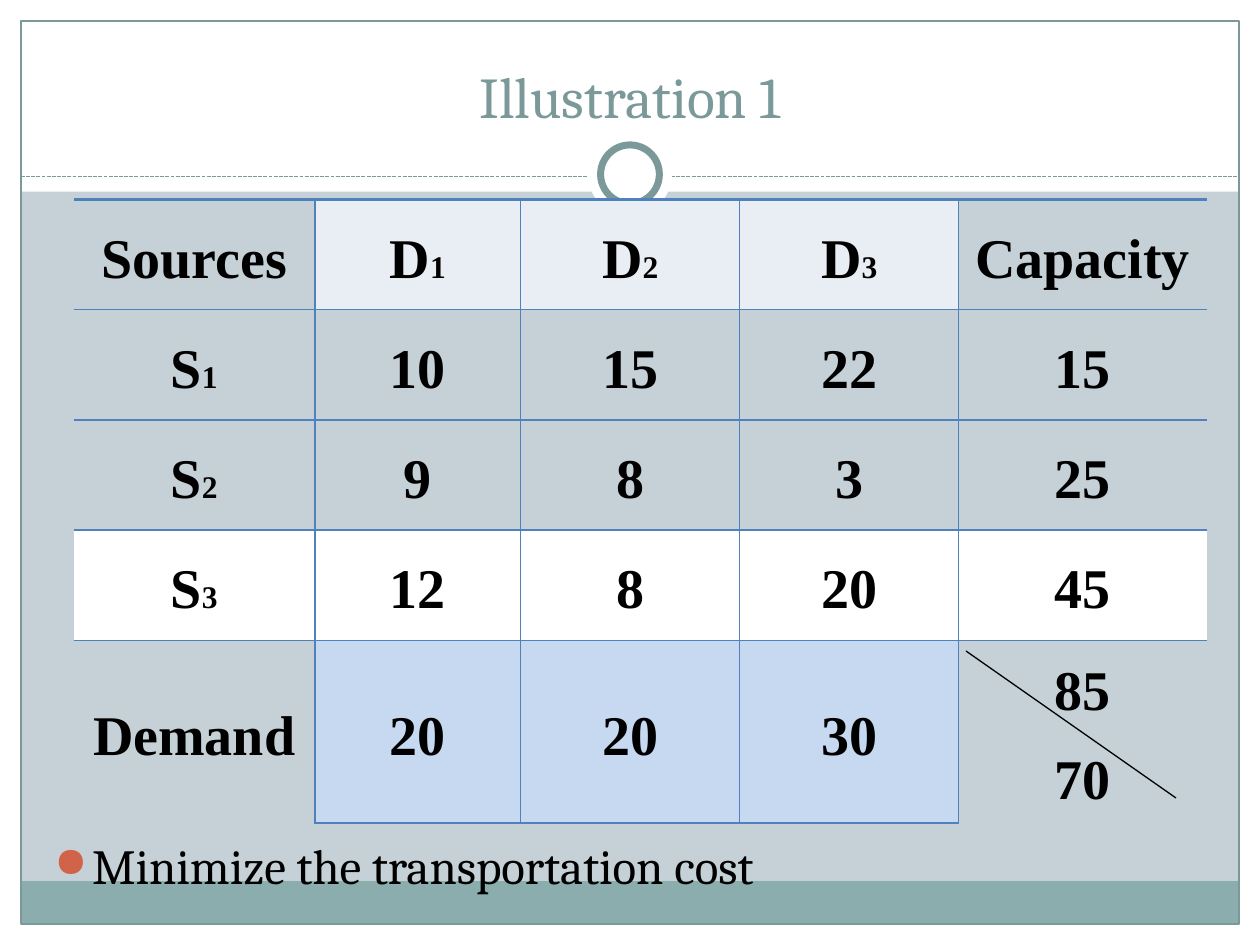
from lxml import etree
from pptx import Presentation
from pptx.dml.color import RGBColor
from pptx.enum.dml import MSO_LINE
from pptx.enum.shapes import MSO_CONNECTOR, MSO_SHAPE
from pptx.enum.text import MSO_ANCHOR, PP_ALIGN
from pptx.oxml.ns import qn
from pptx.util import Pt

RECTANGLE, OVAL = MSO_SHAPE.RECTANGLE, MSO_SHAPE.OVAL
TOP, MIDDLE, BOTTOM = MSO_ANCHOR.TOP, MSO_ANCHOR.MIDDLE, MSO_ANCHOR.BOTTOM
LEFT, CENTER = PP_ALIGN.LEFT, PP_ALIGN.CENTER
STRAIGHT, DASHED = MSO_CONNECTOR.STRAIGHT, MSO_LINE.SQUARE_DOT

TITLE = "Illustration 1"
GOAL = "Minimize the transportation cost"
# A cell is a list of paragraphs; a paragraph is a symbol and its index.
DESTINATIONS = [[("D", str(number))] for number in (1, 2, 3)]
COSTS = [(10, 15, 22, 15), (9, 8, 3, 25), (12, 8, 20, 45)]
ROWS = [
    [[("Sources", "")], *DESTINATIONS, [("Capacity", "")]],
    *[[[("S", str(number))]] + [[(str(value), "")] for value in values]
      for number, values in enumerate(COSTS, 1)],
    [[("Demand", "")], [("20", "")], [("20", "")], [("30", "")],
     [("85", ""), ("70", "")]],
]
COLUMN_WIDTHS = [138, 117.5, 125.2, 125.2, 141.8]
ROW_HEIGHTS = [63, 63, 63, 63, 64]
TABLE_LEFT, TABLE_TOP = 42, 114

WHITE, BLACK, GREEN, BLUE = "FFFFFF", "000000", "7C999A", "4F81BD"
FOOTER, BACKGROUND, BULLET = "8CADAE", "C5D1D7", "D16349"
HEADER_FILL, DEMAND_FILL = "E9EDF4", "C6D9F1"
# left, top, width, height, preset, fill, line width
FRAME = [
    (0, 528, 720, 12, RECTANGLE, WHITE, 0),
    (0, 0, 720, 109.5, RECTANGLE, WHITE, 0),
    (0, 0, 12, 540, RECTANGLE, WHITE, 0),
    (708, 0, 12, 540, RECTANGLE, WHITE, 0),
    (12, 503.5, 695.5, 24.5, RECTANGLE, FOOTER, 0),
    (12, 12, 696, 516, RECTANGLE, None, 0.75),
]
RINGS = [
    (336, 75.6, 48, 48, OVAL, WHITE, 0),
    (343.2, 82.8, 33.6, 33.6, OVAL, WHITE, 4),
]


def color(value):
    return RGBColor.from_string(value)


def add_shape(slide, left, top, width, height, preset, fill, line_width):
    shape = slide.shapes.add_shape(preset, Pt(left), Pt(top), Pt(width), Pt(height))
    shape.shadow.inherit = False
    if fill:
        shape.fill.solid()
        shape.fill.fore_color.rgb = color(fill)
    else:
        shape.fill.background()
    if line_width:
        shape.line.color.rgb = color(GREEN)
        shape.line.width = Pt(line_width)
    else:
        shape.line.fill.background()


def add_line(slide, start, end, line_color, dash=None):
    line = slide.shapes.add_connector(STRAIGHT, *map(Pt, start + end))
    line.line.color.rgb = color(line_color)
    line.line.width = Pt(0.75)
    if dash:
        line.line.dash_style = dash
    etree.SubElement(line._element.spPr, qn("a:effectLst"))


def add_run(paragraph, text, *, size, font="Cambria", text_color=BLACK, bold=False):
    run = paragraph.add_run()
    run.text = text
    run.font.size = Pt(size)
    run.font.name = font
    run.font.bold = bold
    run.font.color.rgb = color(text_color)


def add_text(slide, text, left, top, width, height, *, align=LEFT, anchor=TOP, **format):
    box = slide.shapes.add_textbox(Pt(left), Pt(top), Pt(width), Pt(height))
    box.text_frame.word_wrap = True
    box.text_frame.vertical_anchor = anchor
    paragraph = box.text_frame.paragraphs[0]
    paragraph.alignment = align
    add_run(paragraph, text, **format)
    return paragraph


def add_bullet(paragraph):
    properties = paragraph._p.get_or_add_pPr()
    properties.set("marL", str(Pt(21.6)))
    properties.set("indent", str(-Pt(21.6)))
    bullet_color = etree.SubElement(properties, qn("a:buClr"))
    etree.SubElement(bullet_color, qn("a:srgbClr"), val=BULLET)
    etree.SubElement(properties, qn("a:buSzPct"), val="85000")
    etree.SubElement(properties, qn("a:buChar"), char="●")


def set_border(cell, side, width):
    """Draw one side (L, R, T or B) of a cell; width 0 leaves it open."""
    line = etree.SubElement(cell._tc.get_or_add_tcPr(), qn(f"a:ln{side}"), w=str(Pt(width)))
    if width:
        fill = etree.SubElement(line, qn("a:solidFill"))
        etree.SubElement(fill, qn("a:srgbClr"), val=BLUE)
    else:
        etree.SubElement(line, qn("a:noFill"))


def cell_fill(row, column):
    if row == 3:
        return WHITE
    inner = 0 < column < len(COLUMN_WIDTHS) - 1
    return {0: HEADER_FILL, 4: DEMAND_FILL}.get(row) if inner else None


def format_cell(cell, paragraphs, row, column):
    last_row, last_column = len(ROWS) - 1, len(COLUMN_WIDTHS) - 1
    outer_column = column in (0, last_column)
    set_border(cell, "L", 1 if column else 0)
    set_border(cell, "R", 1 if column < last_column else 0)
    set_border(cell, "T", 1 if row else 2.25)
    set_border(cell, "B", 0 if row == last_row and outer_column else 1)
    fill = cell_fill(row, column)
    if fill:
        cell.fill.solid()
        cell.fill.fore_color.rgb = color(fill)
    else:
        cell.fill.background()
    cell.vertical_anchor = MIDDLE
    cell.margin_left = cell.margin_right = Pt(6.5)
    cell.margin_top = cell.margin_bottom = Pt(3)
    for number, (symbol, index) in enumerate(paragraphs):
        frame = cell.text_frame
        paragraph = frame.add_paragraph() if number else frame.paragraphs[0]
        paragraph.alignment = CENTER
        paragraph.line_spacing = 1.15
        paragraph.space_after = Pt(10)
        for text, size in ((symbol, 32), (index, 18)):
            if text:
                add_run(paragraph, text, size=size, font="Times New Roman", bold=True)


def add_cost_table(slide):
    table = slide.shapes.add_table(
        len(ROWS), len(COLUMN_WIDTHS), Pt(TABLE_LEFT), Pt(TABLE_TOP),
        Pt(sum(COLUMN_WIDTHS)), Pt(sum(ROW_HEIGHTS))).table
    table.first_row = table.horz_banding = False
    for column, width in zip(table.columns, COLUMN_WIDTHS):
        column.width = Pt(width)
    for row, height in zip(table.rows, ROW_HEIGHTS):
        row.height = Pt(height)
    for row, cells in enumerate(ROWS):
        for column, paragraphs in enumerate(cells):
            format_cell(table.cell(row, column), paragraphs, row, column)


def main():
    presentation = Presentation()
    presentation.slide_width, presentation.slide_height = Pt(720), Pt(540)
    slide = presentation.slides.add_slide(presentation.slide_layouts[6])
    slide.background.fill.solid()
    slide.background.fill.fore_color.rgb = color(BACKGROUND)

    for part in FRAME:
        add_shape(slide, *part)
    add_line(slide, (12, 100.8), (708, 100.8), GREEN, DASHED)
    for ring in RINGS:
        add_shape(slide, *ring)
    add_text(slide, TITLE, 24, 18, 672, 60, align=CENTER, anchor=BOTTOM,
             size=33, text_color=GREEN)
    add_cost_table(slide)
    add_line(slide, (552, 372), (672, 456), BLACK)
    add_bullet(add_text(slide, GOAL, 24, 474, 669.6, 83.5, size=28))
    presentation.save("out.pptx")


if __name__ == "__main__":
    main()
